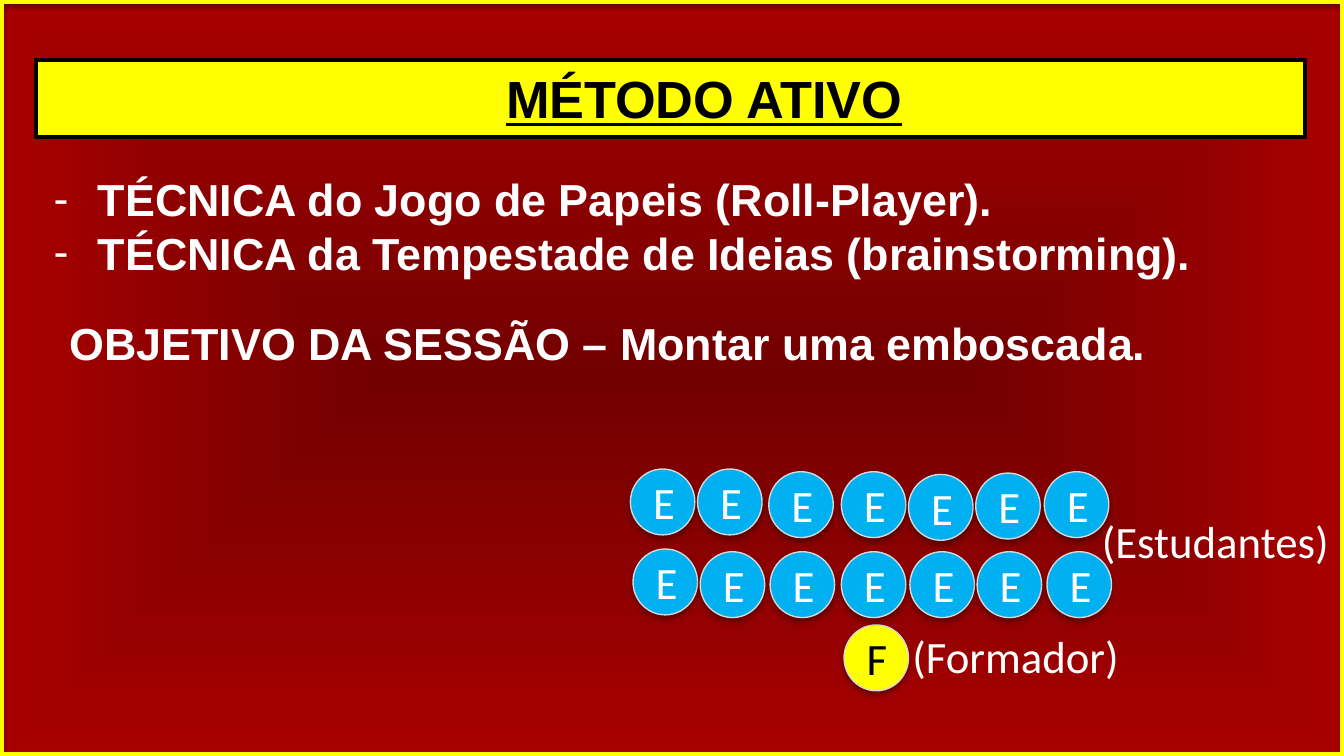
"""Build the "Método ativo" slide with its class seating diagram."""
from dataclasses import dataclass

from lxml import etree
from pptx import Presentation
from pptx.dml.color import RGBColor
from pptx.enum.shapes import MSO_SHAPE
from pptx.enum.text import MSO_ANCHOR, PP_ALIGN
from pptx.oxml import parse_xml
from pptx.oxml.ns import nsdecls, qn
from pptx.util import Emu, Inches, Pt

RECT, OVAL = MSO_SHAPE.RECTANGLE, MSO_SHAPE.OVAL
TOP, MIDDLE = MSO_ANCHOR.TOP, MSO_ANCHOR.MIDDLE
LEFT, CENTER = PP_ALIGN.LEFT, PP_ALIGN.CENTER

YELLOW = RGBColor(0xFF, 0xFF, 0x00)
BLACK = RGBColor(0x00, 0x00, 0x00)
WHITE = RGBColor(0xFF, 0xFF, 0xFF)
BLUE = RGBColor(0x00, 0xB0, 0xF0)
GREY = RGBColor(0xD8, 0xD8, 0xD8)
DARK_RED = RGBColor(0x72, 0x00, 0x00)
RED = RGBColor(0xA8, 0x00, 0x00)

WIDTH = Inches(10)
HEIGHT = Emu(WIDTH * 9 // 16)
COLS, ROWS = 100, 56.25
SEAT_W, SEAT_H = 4.8, 4.9


@dataclass(frozen=True)
class Box:
    """A place on the slide grid, in columns and rows."""
    col: float
    row: float
    cols: float
    rows: float

    def emu(self) -> tuple[Emu, ...]:
        """Return left, top, width and height as lengths."""
        cw, rh = WIDTH / COLS, HEIGHT / ROWS
        return (Emu(round(self.col * cw)), Emu(round(self.row * rh)),
                Emu(round(self.cols * cw)), Emu(round(self.rows * rh)))


@dataclass(frozen=True)
class Label:
    """A free text with its box and font."""
    box: Box
    lines: tuple[str, ...]
    font: str = "Calibri"
    bold: bool = False
    dash: bool = False


@dataclass(frozen=True)
class Seat:
    """A person in the diagram, by the corner of the circle."""
    col: float
    row: float
    letter: str = "E"
    fill: RGBColor = BLUE
    ink: RGBColor = WHITE


LABELS = (
    Label(Box(3, 12.3, 94.1, 9.1),
          ("TÉCNICA do Jogo de Papeis (Roll-Player).",
           "TÉCNICA da Tempestade de Ideias (brainstorming)."),
          "Arial", bold=True, dash=True),
    Label(Box(4.2, 23, 94.1, 5), ("OBJETIVO DA SESSÃO – Montar uma emboscada.",),
          "Arial", bold=True),
    Label(Box(81, 37.7, 20.3, 5), ("(Estudantes)",)),
    Label(Box(66.9, 46.3, 20.3, 5), ("(Formador)",)),
)
BACK_ROW = ((46.9, 34.9), (51.9, 34.9), (57.2, 35.1), (62.6, 35.1),
            (67.6, 35.3), (72.6, 35.2), (77.7, 35.1))
FRONT_ROW = ((47.1, 40.85), (52.1, 41.05), (57.3, 41.05), (62.6, 41.05),
             (67.7, 41.05), (72.7, 41.05), (77.9, 41.05))
SEATS = (Seat(62.8, 46.5, "F", YELLOW, BLACK),
         *(Seat(*spot) for spot in BACK_ROW + FRONT_ROW))


def write(tf, *lines: str, font: str = "Calibri", size: float = 24,
          color: RGBColor = WHITE, bold: bool = False, underline: bool = False,
          align=LEFT, anchor=TOP, dash: bool = False, indent: float = 0) -> None:
    """Fill a text frame with one formatted paragraph per line."""
    tf.word_wrap = True
    tf.vertical_anchor = anchor
    for i, line in enumerate(lines):
        p = tf.add_paragraph() if i else tf.paragraphs[0]
        p.alignment = align
        if dash or indent:
            pPr = p._p.get_or_add_pPr()
            pPr.set("marL", str(Inches(indent)))
            pPr.set("indent", str(-Inches(indent) if dash else 0))
        if dash:
            etree.SubElement(pPr, qn("a:buFont")).set("typeface", font)
            etree.SubElement(pPr, qn("a:buChar")).set("char", "-")
        r = p.add_run()
        r.text = line
        r.font.name, r.font.size = font, Pt(size)
        r.font.bold, r.font.underline = bold, underline
        r.font.color.rgb = color


def outline(sp, color: RGBColor, width: float) -> None:
    """Set the line colour and width of a shape."""
    sp.line.color.rgb = color
    sp.line.width = Pt(width)


def add_shaded(s, kind, box: Box, line: RGBColor, width: float):
    """Add an outlined shape with a soft shadow below it."""
    sp = s.shapes.add_shape(kind, *box.emu())
    outline(sp, line, width)
    sp.shadow.inherit = False
    sp._element.spPr.find(qn("a:effectLst")).append(parse_xml(
        f'<a:outerShdw {nsdecls("a")} blurRad="{Pt(3.1)}" dist="{Pt(1.8)}" '
        'dir="5400000" rotWithShape="0"><a:srgbClr val="000000">'
        '<a:alpha val="35000"/></a:srgbClr></a:outerShdw>'))
    return sp


def paint_background(s) -> None:
    """Give the slide a gradient that spreads from its centre."""
    fill = s.background.fill
    fill.gradient()
    for stop, color, position in zip(fill.gradient_stops, (DARK_RED, RED), (0, 1)):
        stop.color.rgb = color
        stop.position = position
    lin = s.element.xpath(".//p:bg//a:lin")[0]
    lin.getparent().replace(lin, parse_xml(
        f'<a:path {nsdecls("a")} path="shape"><a:fillToRect l="50000" '
        't="50000" r="50000" b="50000"/></a:path>'))


def add_title(s, text: str) -> None:
    """Place and format the title placeholder as a banner."""
    sp = s.shapes.title
    sp.left, sp.top, sp.width, sp.height = Box(2.7, 4.45, 94.4, 5.75).emu()
    sp.fill.solid()
    sp.fill.fore_color.rgb = YELLOW
    outline(sp, BLACK, 2.25)
    write(sp.text_frame, text, font="Arial", size=28, color=BLACK, bold=True,
          underline=True, align=CENTER, indent=0.5)


def add_label(s, label: Label) -> None:
    """Add a text box."""
    sp = s.shapes.add_textbox(*label.box.emu())
    write(sp.text_frame, *label.lines, font=label.font, bold=label.bold,
          dash=label.dash, indent=0.33 if label.dash else 0)


def add_seat(s, seat: Seat) -> None:
    """Add a circle with the letter of one person."""
    sp = add_shaded(s, OVAL, Box(seat.col, seat.row, SEAT_W, SEAT_H), GREY, 0.75)
    sp.fill.solid()
    sp.fill.fore_color.rgb = seat.fill
    write(sp.text_frame, seat.letter, color=seat.ink, align=CENTER, anchor=MIDDLE)


def main() -> None:
    """Build and save the slide."""
    prs = Presentation()
    prs.slide_width, prs.slide_height = WIDTH, HEIGHT
    s = prs.slides.add_slide(prs.slide_layouts.get_by_name("Title Only"))
    paint_background(s)
    add_shaded(s, RECT, Box(0, 0, COLS, ROWS), YELLOW, 4.5).fill.background()
    add_title(s, "MÉTODO ATIVO")
    for seat in SEATS:
        add_seat(s, seat)
    for label in LABELS:
        add_label(s, label)
    prs.save("out.pptx")


if __name__ == "__main__":
    main()
